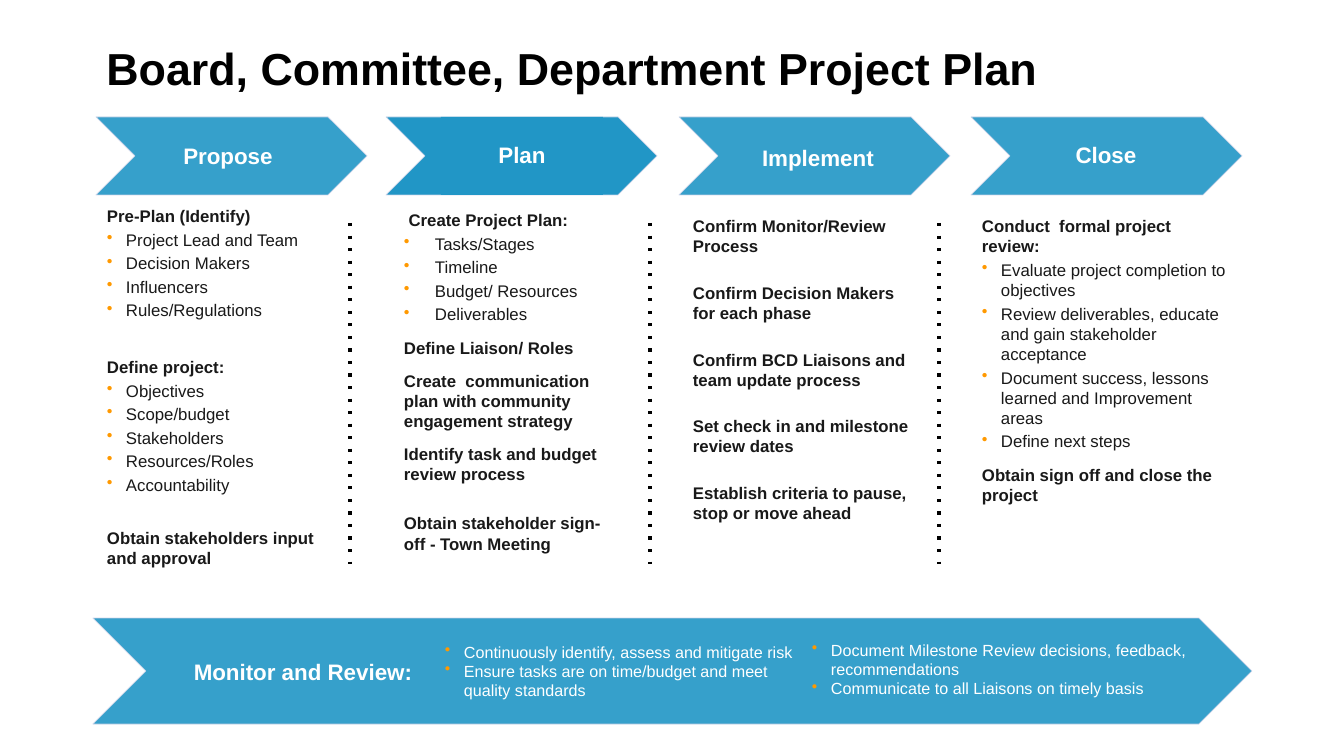
from lxml import etree
from pptx import Presentation
from pptx import util as u
from pptx.dml.color import RGBColor
from pptx.enum import dml, shapes, text
from pptx.oxml.ns import qn

PX = 914400 / 100.8
COLORS = {"blue": "2196C6", "edge": "CFD5EA", "ink": "191919", "black": "000000",
          "white": "FFFFFF", "bullet": "FF9900"}
FORMATS = {
    "title": {"size": u.Pt(32), "bold": True, "color": "black"},
    "label": {"size": u.Pt(16), "bold": True, "color": "white"},
    "heading": {"size": u.Pt(12), "bold": True, "color": "ink"},
    "item": {"size": u.Pt(12), "bold": False, "color": "ink"},
    "review": {"size": u.Pt(11.5), "bold": False, "color": "white"},
}
ITEM_GAP = 2.4
STAGES = [
    {"name": "Propose", "chevron": 96, "label": (51, 1), "body": (95, 200, 271), "indent": 19,
     "content": [
         ("heading", 0, ["Pre-Plan (Identify)"]),
         ("item", ITEM_GAP, ["Project Lead and Team", "Decision Makers", "Influencers",
                             "Rules/Regulations"]),
         ("heading", 26, ["Define project:"]),
         ("item", ITEM_GAP, ["Objectives", "Scope/budget", "Stakeholders", "Resources/Roles",
                             "Accountability"]),
         ("heading", 23.5, ["Obtain stakeholders input"]),
         ("heading", 0, ["and approval"])]},
    {"name": "Plan", "chevron": 386, "label": (55, 0), "body": (392, 204, 235), "indent": 31,
     "content": [
         ("heading", 0, [" Create Project Plan:"]),
         ("item", ITEM_GAP, ["Tasks/Stages", "Timeline", "Budget/ Resources", "Deliverables"]),
         ("heading", 9.3, ["Define Liaison/ Roles",
                           "Create  communication plan with community engagement strategy",
                           "Identify task and budget review process"]),
         ("heading", 20.6, ["Obtain stakeholder sign-off - Town Meeting"])]},
    {"name": "Implement", "chevron": 679, "label": (58, 3), "body": (681, 210, 244), "indent": 19,
     "content": [
         ("heading", 0, ["Confirm Monitor/Review Process"]),
         ("heading", 18.8, ["Confirm Decision Makers for each phase",
                            "Confirm BCD Liaisons and team update process",
                            "Set check in and milestone review dates",
                            "Establish criteria to pause, stop or move ahead"])]},
    {"name": "Close", "chevron": 971, "label": (54, 0), "body": (970, 210, 271), "indent": 19,
     "content": [
         ("heading", 0, ["Conduct  formal project review:"]),
         ("item", ITEM_GAP, ["Evaluate project completion to objectives",
                             "Review deliverables, educate and gain stakeholder acceptance",
                             "Document success, lessons learned and Improvement areas",
                             "Define next steps"]),
         ("heading", 9.3, ["Obtain sign off and close the project"])]},
]
REVIEWS = [
    ((340, 18, 392, 103), ["Continuously identify, assess and mitigate risk",
                           "Ensure tasks are on time/budget and meet quality standards"]),
    ((707, 16, 450, 96), ["Document Milestone Review decisions, feedback, recommendations",
                          "Communicate to all Liaisons on timely basis"]),
]
DIVIDERS = [350, 650, 939]


def px(*lengths):
    return [u.Emu(round(length * PX)) for length in lengths]


def rgb(name):
    return RGBColor.from_string(COLORS[name])


def add_bullet(paragraph, indent):
    properties = paragraph._p.get_or_add_pPr()
    hang = px(indent)[0]
    properties.set("marL", str(hang))
    properties.set("indent", str(-hang))
    tint = etree.SubElement(properties, qn("a:buClr"))
    etree.SubElement(tint, qn("a:srgbClr")).set("val", COLORS["bullet"])
    etree.SubElement(properties, qn("a:buChar")).set("char", "•")


def add_text(slide, box, content, indent=19, margins=(12, 6), centred=False):
    holder = slide.shapes.add_textbox(*px(*box))
    frame = holder.text_frame
    side, end = px(*margins)
    settings = {"word_wrap": True, "margin_left": side, "margin_right": side,
                "margin_top": end, "margin_bottom": end,
                "vertical_anchor": text.MSO_ANCHOR.MIDDLE if centred else text.MSO_ANCHOR.TOP}
    for key, value in settings.items():
        setattr(frame, key, value)
    lines = [(style, gap, line) for style, gap, group in content for line in group]
    for number, (style, gap, line) in enumerate(lines):
        paragraph = frame.add_paragraph() if number else frame.paragraphs[0]
        paragraph.space_before = u.Pt(gap)
        if centred:
            paragraph.alignment = text.PP_ALIGN.CENTER
            paragraph.line_spacing = 0.9
        if style in ("item", "review"):
            add_bullet(paragraph, indent)
        run = paragraph.add_run()
        run.text = line
        run.font.name = "Arial"
        for key, value in FORMATS[style].items():
            if key == "color":
                run.font.color.rgb = rgb(value)
            else:
                setattr(run.font, key, value)
    return holder


def add_chevron(slide, box, opacity=90):
    chevron = slide.shapes.add_shape(shapes.MSO_SHAPE.CHEVRON, *px(*box))
    chevron.shadow.inherit = False
    chevron.fill.solid()
    chevron.fill.fore_color.rgb = rgb("blue")
    chevron.line.color.rgb = rgb("edge")
    chevron.line.width = u.Pt(0.5)
    for shade, percent in zip(chevron._element.spPr.iter(qn("a:srgbClr")), (opacity, 90)):
        etree.SubElement(shade, qn("a:alpha")).set("val", str(percent * 1000))


def add_stage(slide, stage, top, width, height):
    left = stage["chevron"]
    current = stage["name"] == "Plan"
    add_chevron(slide, (left, top, width, height), 100 if current else 90)
    shift, drop = stage["label"]
    label = add_text(slide, (left + shift, top + drop, 162, height),
                     [("label", 0, [stage["name"]])], margins=(1, 1), centred=True)
    if current:
        label.fill.solid()
        label.fill.fore_color.rgb = rgb("blue")
    body_left, body_top, body_width = stage["body"]
    add_text(slide, (body_left, body_top, body_width, 390), stage["content"], stage["indent"])


def add_divider(slide, x, top, bottom):
    divider = slide.shapes.add_connector(shapes.MSO_CONNECTOR.STRAIGHT, *px(x, top, x, bottom))
    divider.line.color.rgb = rgb("black")
    divider.line.width = u.Pt(2.25)
    divider.line.dash_style = dml.MSO_LINE.ROUND_DOT
    properties = divider._element.spPr
    next(properties.iter(qn("a:prstDash"))).set("val", "dot")
    etree.SubElement(properties, qn("a:effectLst"))


def add_review_band(slide, box):
    left, top, width, height = box
    add_chevron(slide, box)
    add_text(slide, (left + 67, top + 2, 286, height), [("label", 0, ["Monitor and Review:"])],
             margins=(1, 1), centred=True)
    for (x, y, w, h), lines in REVIEWS:
        add_text(slide, (left + x, top + y, w, h), [("review", 0, lines)])


def main():
    deck = Presentation()
    deck.slide_width, deck.slide_height = px(1344, 756)
    slide = deck.slides.add_slide(deck.slide_layouts[6])
    add_text(slide, (0, 17, 1145, 108),
             [("title", 0, ["Board, Committee, Department Project Plan"])], centred=True)
    for stage in STAGES:
        add_stage(slide, stage, 117, 271, 78)
    for x in DIVIDERS:
        add_divider(slide, x, 223, 564)
    add_review_band(slide, (93, 618, 1159, 106))
    deck.save("out.pptx")


if __name__ == "__main__":
    main()
